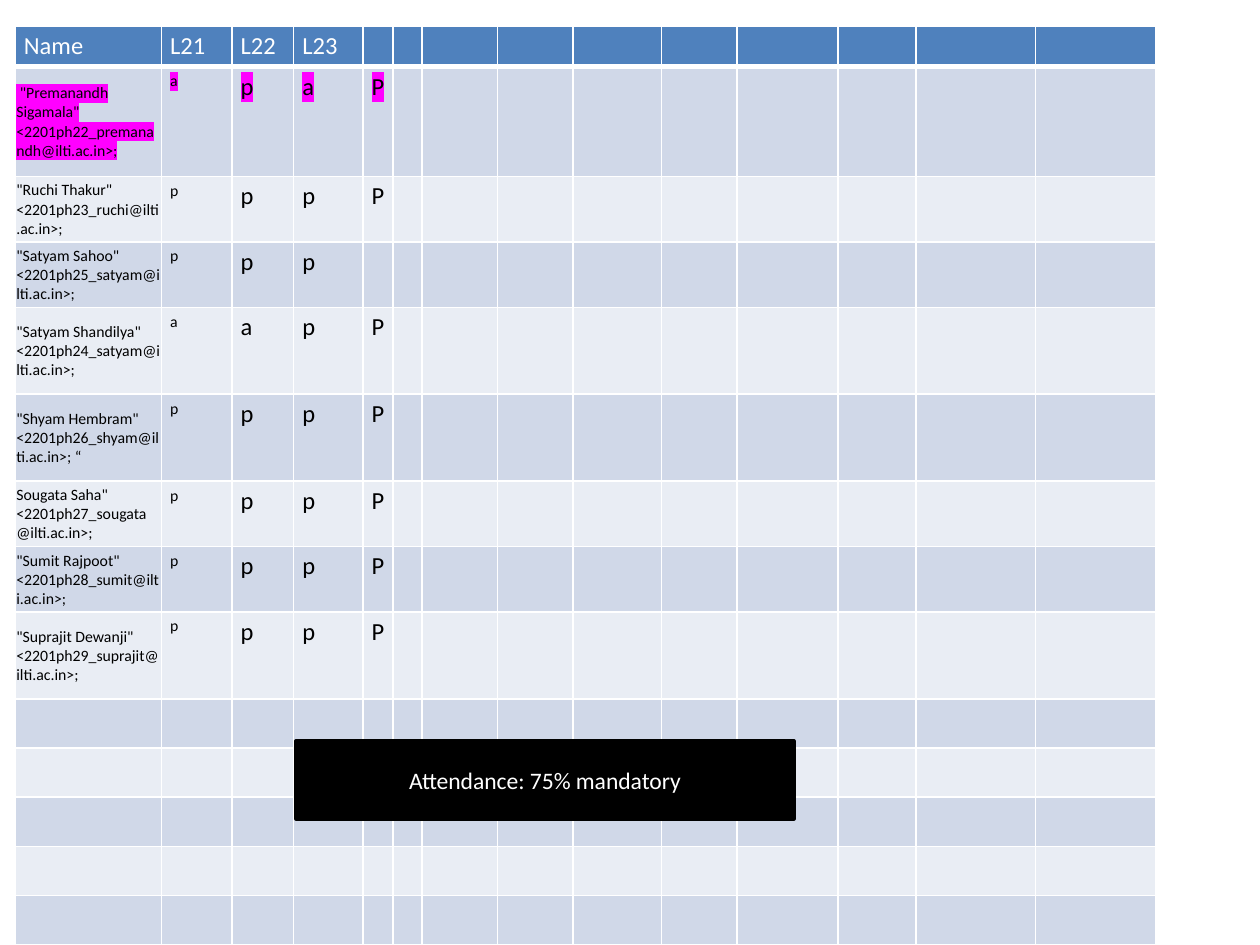
from dataclasses import dataclass

from lxml import etree
from pptx import Presentation
from pptx import util as u
from pptx.dml.color import RGBColor
from pptx.enum import shapes, text
from pptx.oxml.ns import qn


@dataclass(frozen=True)
class Theme:
    font: str = "Calibri"
    header: str = "4F81BD"
    bands: tuple[str, str] = ("D0D8E8", "E9EDF4")
    white: str = "FFFFFF"
    black: str = "000000"
    highlight: str = "FF00FF"
    small: float = 9
    regular: float = 14
    notice: float = 13.5


@dataclass(frozen=True)
class Student:
    name: str
    number: int
    marks: str
    height: float
    opening: str = '"'
    ending: str = ""
    highlighted: bool = False

    @property
    def contact(self) -> str:
        handle = self.name.split()[0].lower()
        return (f'{self.opening}{self.name}" '
                f"<2201ph{self.number}_{handle}@ilti.ac.in>;{self.ending}")


THEME = Theme()
HEADINGS = ("Name", "L21", "L22", "L23")
STUDENTS = (
    Student("Premanandh Sigamala", 22, "apaP", 0.87, opening=' "', highlighted=True),
    Student("Ruchi Thakur", 23, "pppP", 0.52),
    Student("Satyam Sahoo", 25, "ppp", 0.52),
    Student("Satyam Shandilya", 24, "aapP", 0.69),
    Student("Shyam Hembram", 26, "pppP", 0.69, ending=" “"),
    Student("Sougata Saha", 27, "pppP", 0.52, opening=""),
    Student("Sumit Rajpoot", 28, "pppP", 0.52),
    Student("Suprajit Dewanji", 29, "pppP", 0.69),
)
COLUMN_WIDTHS = (1.16, 0.56, 0.49, 0.55, 0.24, 0.23, 0.6,
                 0.6, 0.7, 0.6, 0.8, 0.62, 0.95, 0.95)
EMPTY_ROWS = 5
ROW_HEIGHTS = (0.32, *(student.height for student in STUDENTS), *[0.39] * EMPTY_ROWS)


def set_font(para, size: float, color: str) -> None:
    para.font.name = THEME.font
    para.font.size = u.Pt(size)
    para.font.bold = False
    para.font.color.rgb = RGBColor.from_string(color)


def highlight(span) -> None:
    marker = etree.SubElement(span.font._element, qn("a:highlight"))
    etree.SubElement(marker, qn("a:srgbClr"), val=THEME.highlight)


def add_borders(cell) -> None:
    properties = cell._tc.get_or_add_tcPr()
    for side, width in (("L", 1), ("R", 1), ("T", 1), ("B", 3)):
        line = etree.SubElement(properties, qn(f"a:ln{side}"), w=str(u.Pt(width)))
        fill = etree.SubElement(line, qn("a:solidFill"))
        etree.SubElement(fill, qn("a:srgbClr"), val=THEME.white)


def fill_cell(cell, content: str, fill: str, size: float, color: str,
              marked: bool = False) -> None:
    cell.fill.solid()
    cell.fill.fore_color.rgb = RGBColor.from_string(fill)
    cell.margin_left = cell.margin_right = u.Inches(0.07)
    cell.margin_top = cell.margin_bottom = u.Inches(0.04)
    para = cell.text_frame.paragraphs[0]
    set_font(para, size, color)
    if content:
        span = para.add_run()
        span.text = content
        if marked:
            highlight(span)


def add_attendance_table(page) -> None:
    table = page.shapes.add_table(
        len(ROW_HEIGHTS), len(COLUMN_WIDTHS), u.Inches(0.12), u.Inches(0.21),
        u.Inches(sum(COLUMN_WIDTHS)), u.Inches(sum(ROW_HEIGHTS))).table
    for column, width in zip(table.columns, COLUMN_WIDTHS):
        column.width = u.Inches(width)
    for row, height in zip(table.rows, ROW_HEIGHTS):
        row.height = u.Inches(height)

    # Header row
    for index, cell in enumerate(table.rows[0].cells):
        heading = HEADINGS[index] if index < len(HEADINGS) else ""
        add_borders(cell)
        fill_cell(cell, heading, THEME.header, THEME.regular, THEME.white)

    # Students, then empty rows, in alternating bands
    for number in range(1, len(ROW_HEIGHTS)):
        student = STUDENTS[number - 1] if number <= len(STUDENTS) else None
        contents = (student.contact, *student.marks) if student else ()
        marked = student is not None and student.highlighted
        for index, cell in enumerate(table.rows[number].cells):
            content = contents[index] if index < len(contents) else ""
            size = THEME.small if index < 2 else THEME.regular
            fill_cell(cell, content, THEME.bands[(number - 1) % 2], size,
                      THEME.black, marked)
        if student:
            name_cell = table.cell(number, 0)
            name_cell.vertical_anchor = text.MSO_ANCHOR.MIDDLE
            name_cell.margin_left = name_cell.margin_right = u.Inches(0.01)
            name_cell.margin_top = u.Inches(0.01)
            name_cell.margin_bottom = u.Inches(0)


def add_notice(page, content: str) -> None:
    box = page.shapes.add_shape(
        shapes.MSO_SHAPE.RECTANGLE, u.Inches(2.35), u.Inches(5.88),
        u.Inches(3.95), u.Inches(0.62))
    box.shadow.inherit = False
    box.fill.solid()
    box.fill.fore_color.rgb = RGBColor.from_string(THEME.black)
    box.line.color.rgb = RGBColor.from_string(THEME.black)
    box.line.width = u.Pt(2)
    box.text_frame.vertical_anchor = text.MSO_ANCHOR.MIDDLE
    para = box.text_frame.paragraphs[0]
    para.text = content
    para.alignment = text.PP_ALIGN.CENTER
    set_font(para, THEME.notice, THEME.white)


def main() -> None:
    deck = Presentation()
    deck.slide_width, deck.slide_height = u.Inches(10), u.Inches(7.5)
    page = deck.slides.add_slide(deck.slide_layouts[6])
    add_attendance_table(page)
    add_notice(page, "Attendance: 75% mandatory")
    deck.save("out.pptx")


if __name__ == "__main__":
    main()
